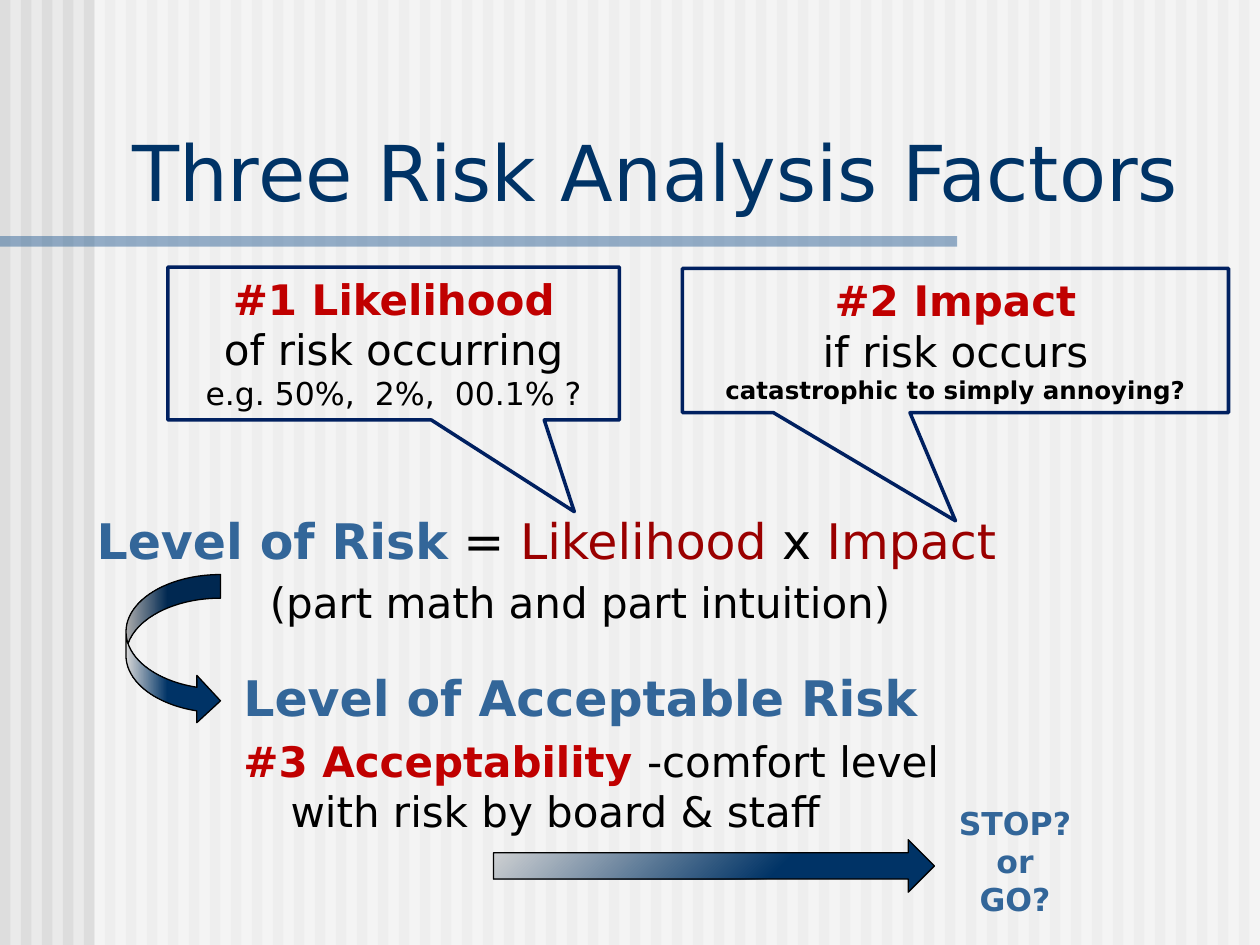
from dataclasses import dataclass

from lxml import etree
from pptx import Presentation, util as u
from pptx.dml.color import RGBColor
from pptx.enum import shapes, text
from pptx.oxml.ns import qn

Pt = u.Pt
MSO = shapes.MSO_SHAPE


@dataclass(frozen=True)
class Theme:
    font: str = "DejaVu Sans"
    paper: str = "EAEAEA"
    stripe: str = "DDDDDD"
    white: str = "FFFFFF"
    silver: str = "D7D7D7"
    black: str = "000000"
    navy: str = "003366"
    outline: str = "002060"
    blue: str = "336699"
    red: str = "C00000"
    dark_red: str = "9A0000"
    title: int = 44
    heading: int = 28
    main: int = 24
    small: int = 18
    tiny: int = 14


T = Theme()


def rgb(color):
    return RGBColor.from_string(color)


def add_text(p, words, size=T.main, color=T.black, bold=False):
    r = p.add_run()
    r.text = words
    r.font.name, r.font.size, r.font.bold = T.font, Pt(size), bold
    r.font.color.rgb = rgb(color)


class Deck:
    """Holds the theme and the current slide; every box is (left, top, width, height) in points."""

    def __init__(self, theme):
        self.theme = theme
        self.prs = Presentation()
        self.prs.slide_width, self.prs.slide_height = Pt(720), Pt(540)
        self.s = self.prs.slides.add_slide(self.prs.slide_layouts[1])
        self.s.background.fill.solid()
        self.s.background.fill.fore_color.rgb = rgb(theme.paper)

    def shape(self, kind, box, fill=None, line=None, width=0.75, alpha=None, parent=None):
        sp = (parent or self.s).shapes.add_shape(kind, *map(Pt, box))
        sp.shadow.inherit = False
        if fill:
            sp.fill.solid()
            sp.fill.fore_color.rgb = rgb(fill)
        else:
            sp.fill.background()
        if alpha:
            clr = sp._element.spPr.find(".//" + qn("a:srgbClr"))
            etree.SubElement(clr, qn("a:alpha"), val=str(alpha * 1000))
        if line:
            sp.line.color.rgb = rgb(line)
            sp.line.width = Pt(width)
        else:
            sp.line.fill.background()
        return sp

    def backdrop(self):
        """Striped paper with a pale veil and a title rule, behind the placeholders."""
        group = self.s.shapes.add_group_shape()
        for i in range(60):
            self.shape(MSO.RECTANGLE, (12 * i, 0, 6, 540), self.theme.stripe, parent=group)
        self.shape(MSO.RECTANGLE, (54, 0, 666, 540), self.theme.white, alpha=50, parent=group)
        self.shape(MSO.RECTANGLE, (0, 135, 547, 6), self.theme.blue, alpha=50, parent=group)
        self.s.shapes._spTree.insert(2, group._element)

    def fill_text(self, sp, paragraphs, align=text.PP_ALIGN.LEFT, anchor=text.MSO_ANCHOR.TOP,
                  before=0, margins=(), wrap=True):
        """Fill a shape; a paragraph is a list of (words, format), margins are (left, first line)."""
        tf = sp.text_frame
        tf.word_wrap, tf.auto_size = wrap, text.MSO_AUTO_SIZE.NONE
        tf.vertical_anchor = anchor
        for i, runs in enumerate(paragraphs):
            p = tf.add_paragraph() if i else tf.paragraphs[0]
            p.alignment, p.space_before = align, Pt(before)
            left, first = margins[i] if margins else (0, 0)
            pPr = p._p.get_or_add_pPr()
            pPr.set("marL", str(Pt(left)))
            pPr.set("indent", str(Pt(first)))
            etree.SubElement(pPr, qn("a:buNone"))
            for words, style in runs:
                add_text(p, words, **style)

    def placeholder(self, index, box, paragraphs, **layout):
        sp = self.s.placeholders[index]
        sp.left, sp.top, sp.width, sp.height = map(Pt, box)
        self.fill_text(sp, paragraphs, **layout)

    def text_box(self, box, paragraphs, **layout):
        self.fill_text(self.s.shapes.add_textbox(*map(Pt, box)), paragraphs, **layout)

    def callout(self, box, tip, paragraphs):
        sp = self.shape(MSO.RECTANGULAR_CALLOUT, box, line=self.theme.outline, width=2)
        for i, offset in enumerate(tip):
            sp.adjustments[i] = offset
        self.fill_text(sp, paragraphs, align=text.PP_ALIGN.CENTER)

    def arrow(self, kind, box, solid_until, angle, rotation=0):
        """Arrow fading from navy to silver after the given share of its length."""
        sp = self.shape(kind, box, line=self.theme.black)
        sp.rotation = rotation
        sp.fill.gradient()
        sp.fill.gradient_angle = angle
        ends = ((solid_until, self.theme.navy), (1, self.theme.silver))
        for stop, (position, color) in zip(sp.fill.gradient_stops, ends):
            stop.position = position
            stop.color.rgb = rgb(color)


def main():
    deck = Deck(T)
    deck.backdrop()
    heading = dict(size=T.heading, color=T.blue, bold=True)
    factor = dict(color=T.red, bold=True)
    formula = dict(size=T.heading, color=T.dark_red)
    sign = dict(size=T.heading)
    verdict = dict(size=T.small, color=T.blue, bold=True)

    deck.placeholder(0, (68.4, 67, 643, 60.5),
                     [[("Three Risk Analysis Factors", dict(size=T.title, color=T.navy))]],
                     anchor=text.MSO_ANCHOR.BOTTOM)
    deck.placeholder(1, (48, 288, 666, 78), [
        [("Level of Risk", heading), (" = ", sign), ("Likelihood ", formula),
         ("x ", sign), ("Impact", formula)],
        [("(part math and part intuition)", {})],
    ], before=4, margins=[(27, -27), (99, 0)])

    deck.callout((96, 152.6, 258, 87.4), (0.4, 1.1), [
        [("#1 Likelihood", factor)],
        [("of risk occurring", {})],
        [("e.g. 50%,  2%,  00.1% ?", dict(size=T.small))],
    ])
    deck.callout((390, 153.4, 312, 82.4), (0, 1.25), [
        [("#2 Impact", factor)],
        [("if risk occurs", {})],
        [("catastrophic to simply annoying?", dict(size=T.tiny, bold=True))],
    ])
    deck.text_box((132, 378, 426, 111), [
        [("Level of Acceptable Risk", heading)],
        [("#3 Acceptability ", factor), ("-comfort level with risk by board & staff", {})],
    ], before=5, margins=[(27, -27)] * 2)

    deck.arrow(MSO.CURVED_RIGHT_ARROW, (72, 328.3, 54, 85.7), 0.56, 180)
    deck.arrow(MSO.DOWN_ARROW, (393, 368.8, 30, 252), 0.36, 45, rotation=270)
    deck.text_box((540, 456, 80, 72.7), [[(word, verdict)] for word in ("STOP?", "or", "GO?")],
                  align=text.PP_ALIGN.CENTER, wrap=False)
    deck.prs.save("out.pptx")


if __name__ == "__main__":
    main()
